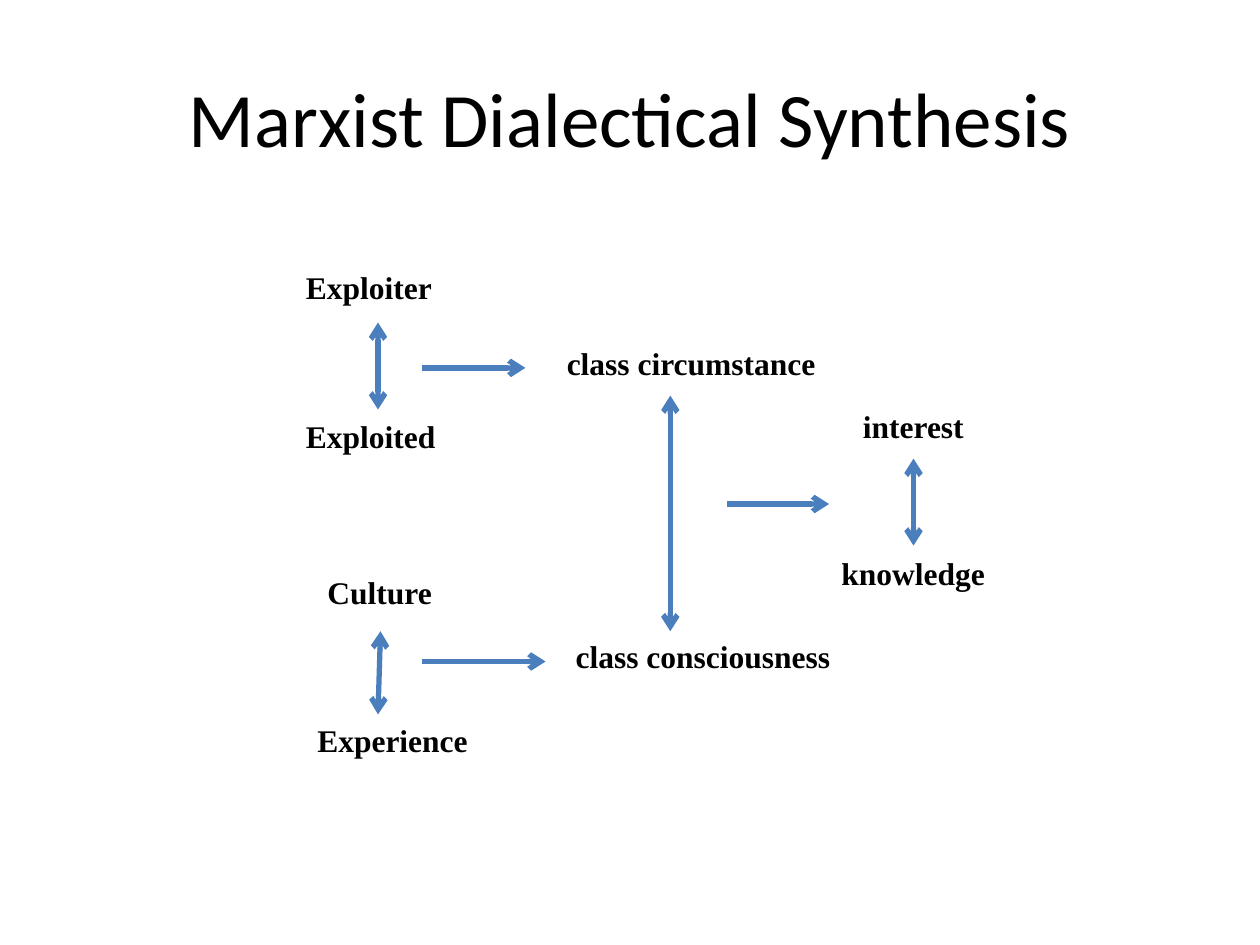
"""Build the Marxist Dialectical Synthesis slide."""
from dataclasses import dataclass

from lxml.etree import SubElement
from pptx import Presentation
from pptx.dml.color import RGBColor
from pptx.enum.shapes import MSO_CONNECTOR
from pptx.enum.text import MSO_ANCHOR, MSO_AUTO_SIZE, PP_ALIGN
from pptx.oxml.ns import qn
from pptx.slide import Slide
from pptx.util import Inches, Pt


@dataclass(frozen=True)
class Theme:
    text_color: RGBColor = RGBColor(0, 0, 0)
    arrow_color: RGBColor = RGBColor(0x4B, 0x7E, 0xBC)
    title_font: str = "Calibri"
    label_font: str = "Times New Roman"
    title_size: Pt = Pt(44)
    label_size: Pt = Pt(18)
    arrow_width: Pt = Pt(3)


@dataclass(frozen=True)
class Label:
    text: str
    left: float
    top: float
    width: float
    wrap: bool = False


@dataclass(frozen=True)
class Arrow:
    start: tuple[float, float]
    end: tuple[float, float]
    two_way: bool = False


THEME = Theme()
LABEL_HEIGHT = 0.4

LABELS = [
    Label("Exploiter", 2.33, 2.08, 1.21),
    Label("Exploited", 2.33, 3.26, 1.33, wrap=True),
    Label("interest", 6.75, 3.18, 1.01),
    Label("knowledge", 6.58, 4.35, 1.35),
    Label("class circumstance", 4.4, 2.68, 2.2),
    Label("class consciousness", 4.47, 5.01, 2.24),
    Label("Culture", 2.5, 4.5, 1.04),
    Label("Experience", 2.42, 5.67, 1.41),
]

ARROWS = [
    Arrow((3, 2.56), (3, 3.25), two_way=True),
    Arrow((3.35, 2.92), (4.17, 2.92)),
    Arrow((3.02, 5.01), (3, 5.67), two_way=True),
    Arrow((7.25, 3.64), (7.25, 4.33), two_way=True),
    Arrow((5.32, 3.14), (5.32, 5.01), two_way=True),
    Arrow((3.35, 5.25), (4.33, 5.25)),
    Arrow((5.77, 4), (6.58, 4)),
]


def add_title(slide: Slide, text: str) -> None:
    shape = slide.shapes.add_textbox(Inches(0.5), Inches(0.3), Inches(9), Inches(1.25))
    frame = shape.text_frame
    frame.word_wrap = True
    frame.vertical_anchor = MSO_ANCHOR.MIDDLE
    paragraph = frame.paragraphs[0]
    paragraph.alignment = PP_ALIGN.CENTER
    run = paragraph.add_run()
    run.text = text
    run.font.name = THEME.title_font
    run.font.size = THEME.title_size
    run.font.color.rgb = THEME.text_color


def add_label(slide: Slide, label: Label) -> None:
    shape = slide.shapes.add_textbox(
        Inches(label.left), Inches(label.top), Inches(label.width), Inches(LABEL_HEIGHT)
    )
    frame = shape.text_frame
    frame.word_wrap = label.wrap
    frame.auto_size = MSO_AUTO_SIZE.SHAPE_TO_FIT_TEXT
    run = frame.paragraphs[0].add_run()
    run.text = label.text
    run.font.name = THEME.label_font
    run.font.size = THEME.label_size
    run.font.bold = True
    run.font.color.rgb = THEME.text_color


def add_arrow(slide: Slide, arrow: Arrow) -> None:
    points = [Inches(value) for value in (*arrow.start, *arrow.end)]
    connector = slide.shapes.add_connector(MSO_CONNECTOR.STRAIGHT, *points)
    connector.line.color.rgb = THEME.arrow_color
    connector.line.width = THEME.arrow_width
    properties = connector.element.spPr
    line = properties.find(qn("a:ln"))
    for end in ("a:headEnd", "a:tailEnd") if arrow.two_way else ("a:tailEnd",):
        SubElement(line, qn(end), type="arrow")
    SubElement(properties, qn("a:effectLst"))


def main() -> None:
    presentation = Presentation()
    presentation.slide_width = Inches(10)
    presentation.slide_height = Inches(7.5)
    slide = presentation.slides.add_slide(presentation.slide_layouts[6])
    add_title(slide, "Marxist Dialectical Synthesis")
    for label in LABELS:
        add_label(slide, label)
    for arrow in ARROWS:
        add_arrow(slide, arrow)
    presentation.save("out.pptx")


if __name__ == "__main__":
    main()
